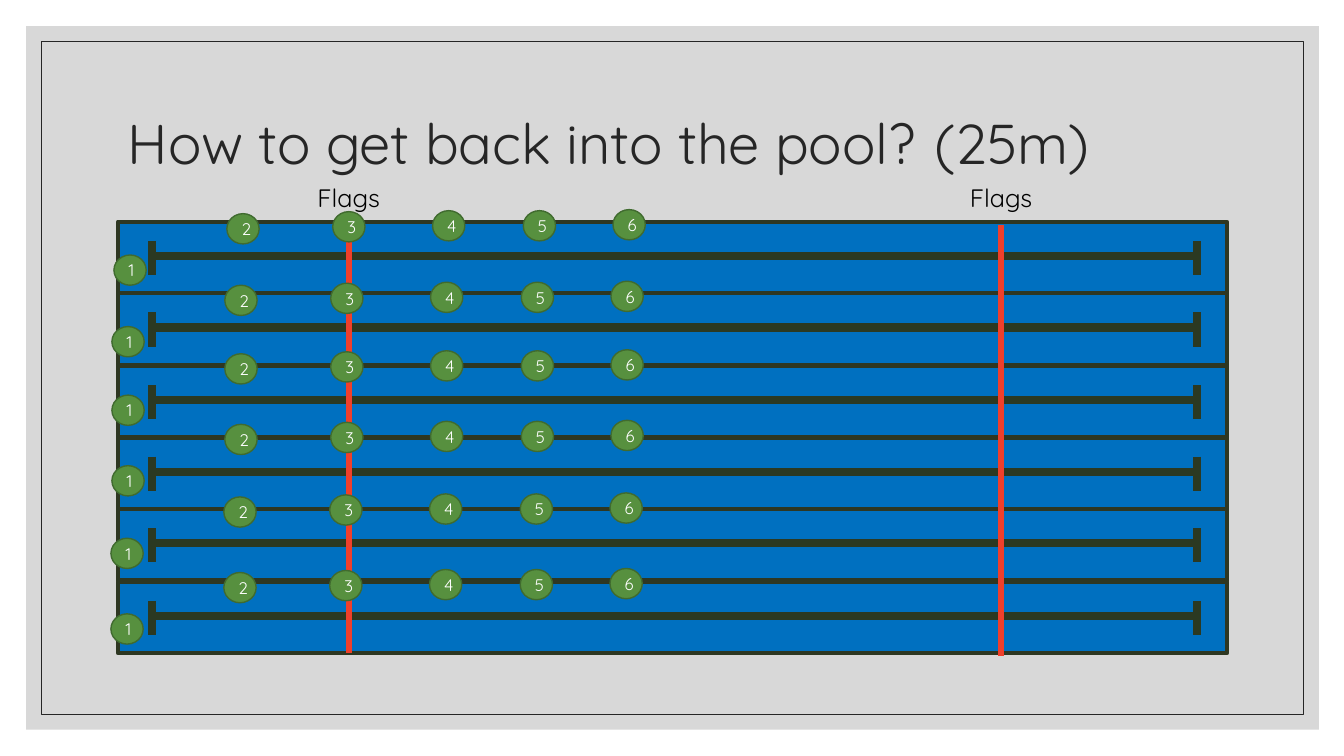
from pptx import Presentation
from pptx.dml.color import RGBColor
from pptx.enum.shapes import MSO_CONNECTOR, MSO_SHAPE as Shape
from pptx.enum.text import MSO_ANCHOR as Anchor, PP_ALIGN as Align
from pptx.oxml import parse_xml
from pptx.oxml.ns import nsdecls, qn
from pptx.util import Pt

PX = 9144  # 100 px to the inch
COLORS = {
    "panel": "BFBFBF", "ink": "262626", "black": "000000", "white": "FFFFFF",
    "water": "0070C0", "rope": "2E3722", "marking": "2B3922", "flag": "F03F2B",
    "swimmer": "57903F", "swimmer_edge": "406B2F",
}
LANES = 6
LANE_PITCH = 71.35
POOL_LEFT, POOL_TOP, POOL_WIDTH, LANE_HEIGHT = 117, 220, 1100, 71
SWIM_START, SWIM_END = 147, 1187

# Left and top of swimmer 1 in each lane, then every swimmer's offset from it
FIRST_SWIMMERS = [(113, 253), (111, 324), (111, 392), (111, 462), (110, 534), (110, 609)]
SWIMMER_OFFSETS = [(0, 0), (112, -41), (217, -43), (316, -44), (406, -44), (495, -45)]


def style_line(line, color, width):
    line.color.rgb = RGBColor.from_string(COLORS[color])
    line.width = Pt(width)


def add_item(shapes, kind, place, fill=None, line=None, text=None, size=18,
             color="white", align=Align.LEFT, anchor=Anchor.TOP, spacing=1.0):
    """Add a shape, a text box (kind None) or a line (kind "line"; place is its two ends)."""
    lengths = [round(value * PX) for value in place]
    if kind == "line":
        item = shapes.add_connector(MSO_CONNECTOR.STRAIGHT, *lengths)
        item._element.spPr.append(parse_xml(f"<a:effectLst {nsdecls('a')}/>"))
        style_line(item.line, *line)
        return item
    if kind is None:
        item = shapes.add_textbox(*lengths)
    else:
        item = shapes.add_shape(kind, *lengths)
        item.shadow.inherit = False
        if fill:
            item.fill.solid()
            item.fill.fore_color.rgb = RGBColor.from_string(COLORS[fill])
        else:
            item.fill.background()
        if line:
            style_line(item.line, *line)
        else:
            item.line.fill.background()
    if text:
        frame = item.text_frame
        frame.word_wrap = True
        frame.vertical_anchor = anchor
        para = frame.paragraphs[0]
        para.alignment = align
        para.line_spacing = spacing
        span = para.add_run()
        span.text = text
        for name, value in {"name": "Quicksand", "size": Pt(size)}.items():
            setattr(span.font, name, value)
        span.font.color.rgb = RGBColor.from_string(COLORS[color])
    return item


deck = Presentation()
deck.slide_width, deck.slide_height = 1333 * PX, 750 * PX
page = deck.slides.add_slide(deck.slide_layouts[6])

# Background panel and frame
panel = add_item(page.shapes, Shape.RECTANGLE, (26, 26, 1282, 698), fill="panel")
panel_color = panel._element.spPr.find(qn("a:solidFill"))[0]
panel_color.append(parse_xml(f'<a:alpha {nsdecls("a")} val="60000"/>'))
add_item(page.shapes, Shape.RECTANGLE, (41, 41, 1252, 668), line=("ink", 0.5))

add_item(page.shapes, None, (117, 70, 1100, 150),
         text="How to get back into the pool?\t(25m)", size=40, color="ink",
         anchor=Anchor.MIDDLE, spacing=0.9)

# Lanes with their floor markings
for lane in range(LANES):
    top = POOL_TOP + round(lane * LANE_PITCH)
    group = page.shapes.add_group_shape()
    add_item(group.shapes, Shape.RECTANGLE, (POOL_LEFT, top, POOL_WIDTH, LANE_HEIGHT),
             fill="water", line=("rope", 3))
    for marking in [(SWIM_START, top + 34, SWIM_END, top + 34),
                    (SWIM_START + 4, top + 19, SWIM_START + 4, top + 53),
                    (SWIM_END, top + 19, SWIM_END, top + 53)]:
        add_item(group.shapes, "line", marking, line=("marking", 6))

# Flag lines and labels
for x, top in [(346, 220), (993, 223)]:
    add_item(page.shapes, "line", (x, top, x, top + 428), line=("flag", 4.5))
for x in (305, 952):
    add_item(page.shapes, None, (x, 176, 105, 40), text="Flags", color="black")

# Numbered swimmers
for left, top in FIRST_SWIMMERS:
    group = page.shapes.add_group_shape()
    for number, (right, down) in enumerate(SWIMMER_OFFSETS, start=1):
        add_item(group.shapes, Shape.OVAL, (left + right, top + down, 32, 30),
                 fill="swimmer", line=("swimmer_edge", 1), text=str(number), size=12,
                 align=Align.CENTER, anchor=Anchor.MIDDLE)

deck.save("out.pptx")
